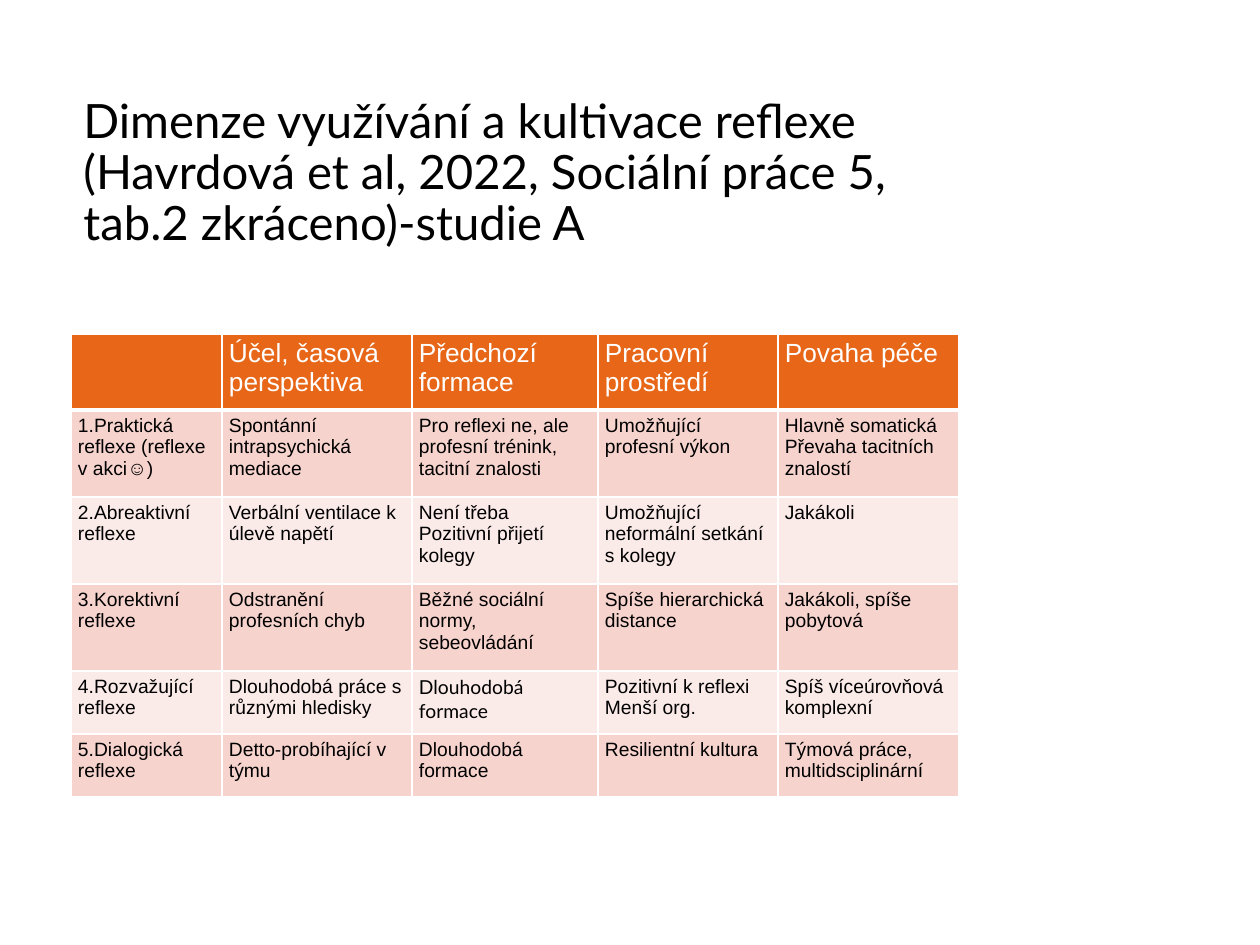
from dataclasses import dataclass

from lxml import etree
from pptx import Presentation
from pptx import util as u
from pptx.dml.color import RGBColor
from pptx.enum import text
from pptx.oxml import ns

WHITE, BLACK, ORANGE = "FFFFFF", "000000", "E76618"
BANDS = ("F6D3CC", "FAEAE8")
COLUMNS = (151, 190, 186, 180, 181)
TITLE = (
    "Dimenze využívání a kultivace reflexe",
    "(Havrdová et al, 2022, Sociální práce 5, tab.2 zkráceno)-studie A",
)


@dataclass(frozen=True)
class Row:
    height: int
    cells: tuple[str, ...]


@dataclass(frozen=True)
class Style:
    size: int
    color: str
    font: str = "Arial"


HEADER_STYLE = Style(15, WHITE)
BODY_STYLE = Style(11, BLACK)
LATO_STYLE = Style(11, BLACK, "Lato")
LATO_CELL = (4, 2)

ROWS = (
    Row(76, ("", "Účel, časová perspektiva", "Předchozí formace",
             "Pracovní prostředí", "Povaha péče")),
    Row(87, ("1.Praktická reflexe (reflexe v akci☺)",
             "Spontánní intrapsychická mediace",
             "Pro reflexi ne, ale profesní trénink, tacitní znalosti",
             "Umožňující profesní výkon",
             "Hlavně somatická\nPřevaha tacitních znalostí")),
    Row(87, ("2.Abreaktivní reflexe",
             "Verbální ventilace k úlevě napětí",
             "Není třeba\nPozitivní přijetí kolegy",
             "Umožňující neformální setkání s kolegy",
             "Jakákoli")),
    Row(87, ("3.Korektivní reflexe",
             "Odstranění profesních chyb",
             "Běžné sociální normy, sebeovládání",
             "Spíše hierarchická distance",
             "Jakákoli, spíše pobytová")),
    Row(63, ("4.Rozvažující reflexe",
             "Dlouhodobá práce s různými hledisky",
             "Dlouhodobá formace",
             "Pozitivní k reflexi\nMenší org.",
             "Spíš víceúrovňová komplexní")),
    Row(63, ("5.Dialogická reflexe",
             "Detto-probíhající v týmu",
             "Dlouhodobá formace",
             "Resilientní kultura",
             "Týmová práce, multidsciplinární")),
)


def px(n: int) -> u.Emu:
    """Turn pixels at 126 to the inch into EMU."""
    return u.Emu(round(n * 914400 / 126))


def rgb(value: str) -> RGBColor:
    """Turn a hex string into a colour."""
    return RGBColor.from_string(value)


def add_run(p, words: str, style: Style) -> None:
    """Append one styled run to a paragraph."""
    r = p.add_run()
    r.text = words
    r.font.name = style.font
    r.font.size = u.Pt(style.size)
    r.font.bold = False
    r.font.color.rgb = rgb(style.color)


def add_title(s) -> None:
    """Draw the two-part title, split by a line break."""
    sp = s.shapes.add_textbox(px(71), px(84), px(888), px(181))
    tf = sp.text_frame
    tf.word_wrap = True
    tf.vertical_anchor = text.MSO_ANCHOR.MIDDLE
    p = tf.paragraphs[0]
    p.line_spacing = 0.9
    for i, words in enumerate(TITLE):
        if i:
            p.add_line_break()
        add_run(p, words, Style(27, BLACK, "Lato"))


def set_borders(cell, bottom: int) -> None:
    """Give a cell white borders, with its own bottom width in points."""
    tc_pr = cell._tc.get_or_add_tcPr()
    for side, width in (("L", 1), ("R", 1), ("T", 1), ("B", bottom)):
        ln = etree.SubElement(tc_pr, ns.qn(f"a:ln{side}"), w=str(u.Pt(width)))
        fill = etree.SubElement(ln, ns.qn("a:solidFill"))
        etree.SubElement(fill, ns.qn("a:srgbClr"), val=WHITE)


def fill_cell(cell, words: str, fill: str, style: Style, bottom: int) -> None:
    """Set the borders, fill, margins and paragraphs of a cell."""
    set_borders(cell, bottom)
    cell.fill.solid()
    cell.fill.fore_color.rgb = rgb(fill)
    cell.margin_left = cell.margin_right = px(7)
    cell.margin_top = cell.margin_bottom = px(5)
    tf = cell.text_frame
    for i, line in enumerate(words.split("\n") if words else ()):
        p = tf.add_paragraph() if i else tf.paragraphs[0]
        add_run(p, line, style)


def add_reflection_table(s) -> None:
    """Draw the table of reflection types."""
    height = sum(row.height for row in ROWS)
    table = s.shapes.add_table(len(ROWS), len(COLUMNS), px(71), px(334),
                               px(sum(COLUMNS)), px(height)).table
    table.horz_banding = False
    for column, width in zip(table.columns, COLUMNS):
        column.width = px(width)
    for i, row in enumerate(ROWS):
        table.rows[i].height = px(row.height)
        for j, words in enumerate(row.cells):
            cell = table.cell(i, j)
            if i == 0:
                fill_cell(cell, words, ORANGE, HEADER_STYLE, 3)
            else:
                style = LATO_STYLE if (i, j) == LATO_CELL else BODY_STYLE
                fill_cell(cell, words, BANDS[(i - 1) % 2], style, 1)


def main() -> None:
    """Build the slide and save it."""
    prs = Presentation()
    prs.slide_width, prs.slide_height = u.Inches(10), u.Inches(7.5)
    s = prs.slides.add_slide(prs.slide_layouts[6])
    add_title(s)
    add_reflection_table(s)
    prs.save("out.pptx")


if __name__ == "__main__":
    main()
